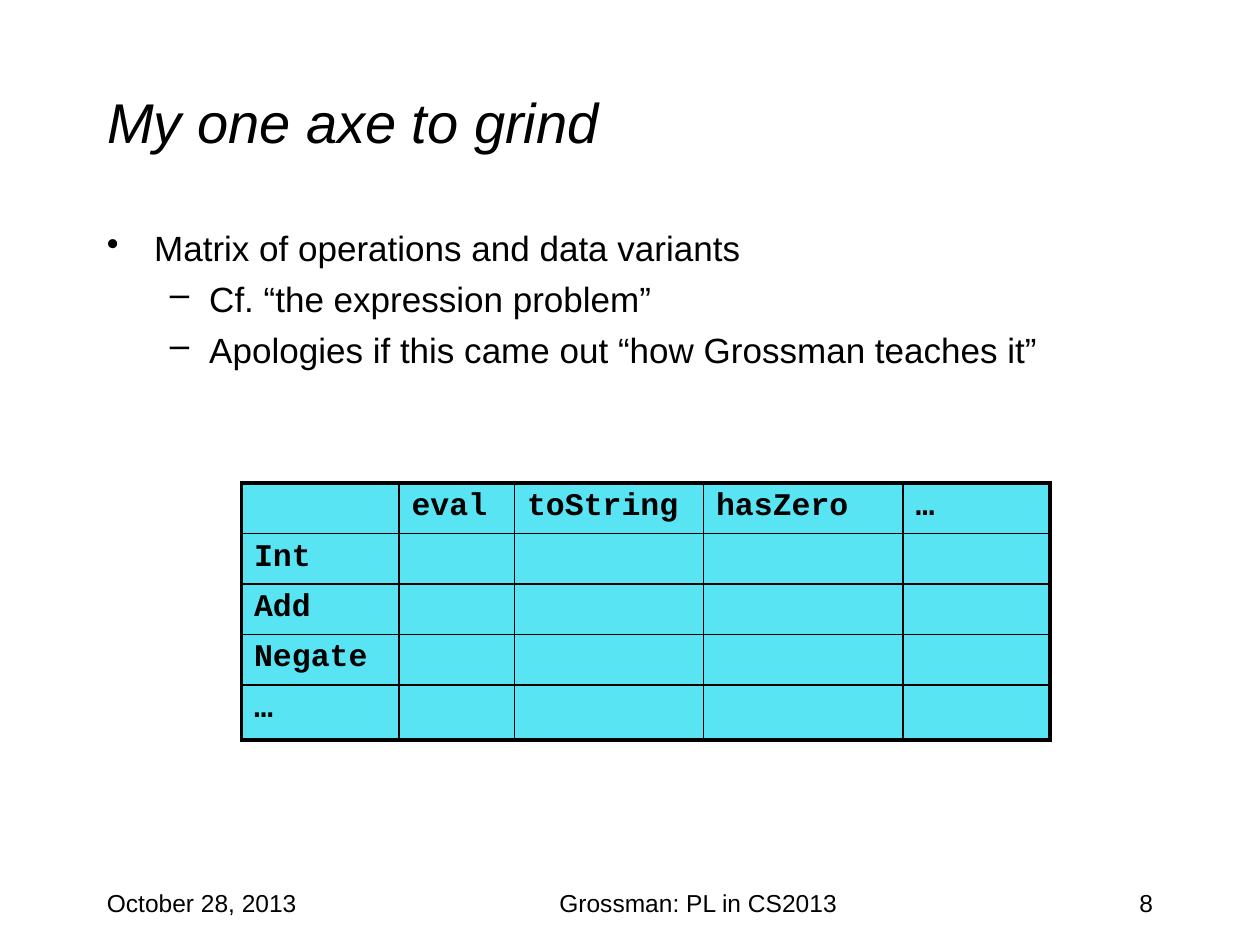
from dataclasses import dataclass

from lxml.etree import SubElement
from pptx import Presentation
from pptx.dml.color import RGBColor
from pptx.enum.text import MSO_ANCHOR, MSO_AUTO_SIZE, PP_ALIGN
from pptx.oxml.ns import qn
from pptx.util import Pt


@dataclass(frozen=True)
class Theme:
    ink: str = "000000"
    cell: str = "59E4F3"
    body_font: str = "Arial"
    code_font: str = "Courier New"
    title_size: float = 32
    body_size: float = 20
    code_size: float = 18
    footer_size: float = 14
    outer_line: float = 2.25
    inner_line: float = 1


THEME = Theme()

# Bullet character, left margin and first-line indent by level
BULLETS = [("•", 27, -27), ("–", 58.5, -22.5)]

POINTS = [
    (0, "Matrix of operations and data variants"),
    (1, "Cf. “the expression problem”"),
    (1, "Apologies if this came out “how Grossman teaches it”"),
]
OPERATIONS = ["eval", "toString", "hasZero", "…"]
VARIANTS = ["Int", "Add", "Negate", "…"]
COLUMN_WIDTHS = [90, 66, 108, 114, 84]
ROW_HEIGHTS = [27.6, 27.6, 27.6, 27.6, 31.5]


def write_text(paragraph, text, size, font=THEME.body_font, bold=False,
               italic=False, align=PP_ALIGN.LEFT):
    paragraph.alignment = align
    run = paragraph.add_run()
    run.text = text
    run.font.name = font
    run.font.size = Pt(size)
    run.font.bold = bold
    run.font.italic = italic
    run.font.color.rgb = RGBColor.from_string(THEME.ink)


def add_text_frame(slide, box):
    frame = slide.shapes.add_textbox(*map(Pt, box)).text_frame
    frame.word_wrap = True
    return frame


def set_bullet(paragraph, level):
    character, margin, indent = BULLETS[level]
    paragraph.level = level
    properties = paragraph._p.get_or_add_pPr()
    properties.set("marL", str(Pt(margin)))
    properties.set("indent", str(Pt(indent)))
    SubElement(properties, qn("a:buChar"), char=character)


def set_borders(cell, widths):
    properties = cell._tc.get_or_add_tcPr()
    for side, width in zip("LRTB", widths):
        line = SubElement(properties, qn(f"a:ln{side}"), w=str(Pt(width)))
        fill = SubElement(line, qn("a:solidFill"))
        SubElement(fill, qn("a:srgbClr"), val=THEME.ink)


def place_title(slide, box, text):
    title = slide.shapes.title
    title.left, title.top, title.width, title.height = map(Pt, box)
    frame = title.text_frame
    frame.auto_size = MSO_AUTO_SIZE.NONE
    frame.vertical_anchor = MSO_ANCHOR.MIDDLE
    write_text(frame.paragraphs[0], text, THEME.title_size, italic=True)


def place_points(slide, box, points):
    frame = add_text_frame(slide, box)
    for index, (level, text) in enumerate(points):
        paragraph = frame.add_paragraph() if index else frame.paragraphs[0]
        paragraph.space_before = Pt(5)
        set_bullet(paragraph, level)
        write_text(paragraph, text, THEME.body_size)


def place_matrix(slide, box, operations, variants):
    labels = [["", *operations]]
    labels += [[variant] + [""] * len(operations) for variant in variants]
    last_row, last_column = len(variants), len(operations)
    table = slide.shapes.add_table(
        last_row + 1, last_column + 1, *map(Pt, box)).table
    for column, width in zip(table.columns, COLUMN_WIDTHS):
        column.width = Pt(width)
    for row, height in zip(table.rows, ROW_HEIGHTS):
        row.height = Pt(height)

    for r, row_labels in enumerate(labels):
        for c, label in enumerate(row_labels):
            cell = table.cell(r, c)
            # Heavy lines around the outside, thin ones inside
            outer_sides = (c == 0, c == last_column, r == 0, r == last_row)
            set_borders(cell, [THEME.outer_line if outer else THEME.inner_line
                               for outer in outer_sides])
            cell.fill.solid()
            cell.fill.fore_color.rgb = RGBColor.from_string(THEME.cell)
            if label:
                write_text(cell.text_frame.paragraphs[0], label,
                           THEME.code_size, font=THEME.code_font, bold=True)
            else:
                # Keeps blank cells from stretching their row
                cell.margin_top = cell.margin_bottom = 0


def place_footer(slide, box, date, caption, number):
    left, top, width, height = box
    side_width = 150
    parts = [
        (date, left, side_width, PP_ALIGN.LEFT),
        (number, left + width - side_width, side_width, PP_ALIGN.RIGHT),
        (caption, left + 144, 402, PP_ALIGN.CENTER),
    ]
    for text, part_left, part_width, align in parts:
        frame = add_text_frame(slide, (part_left, top, part_width, height))
        write_text(frame.paragraphs[0], text, THEME.footer_size, align=align)


def main():
    presentation = Presentation()
    presentation.slide_width = Pt(720)
    presentation.slide_height = Pt(540)
    slide = presentation.slides.add_slide(presentation.slide_layouts[5])

    place_title(slide, (54, 24, 612, 90), "My one axe to grind")
    place_points(slide, (54, 126, 612, 354), POINTS)
    place_footer(slide, (54, 504, 612, 36),
                 "October 28, 2013", "Grossman: PL in CS2013", "8")
    place_matrix(slide, (138, 276, sum(COLUMN_WIDTHS), sum(ROW_HEIGHTS)),
                 OPERATIONS, VARIANTS)

    presentation.save("out.pptx")


if __name__ == "__main__":
    main()
